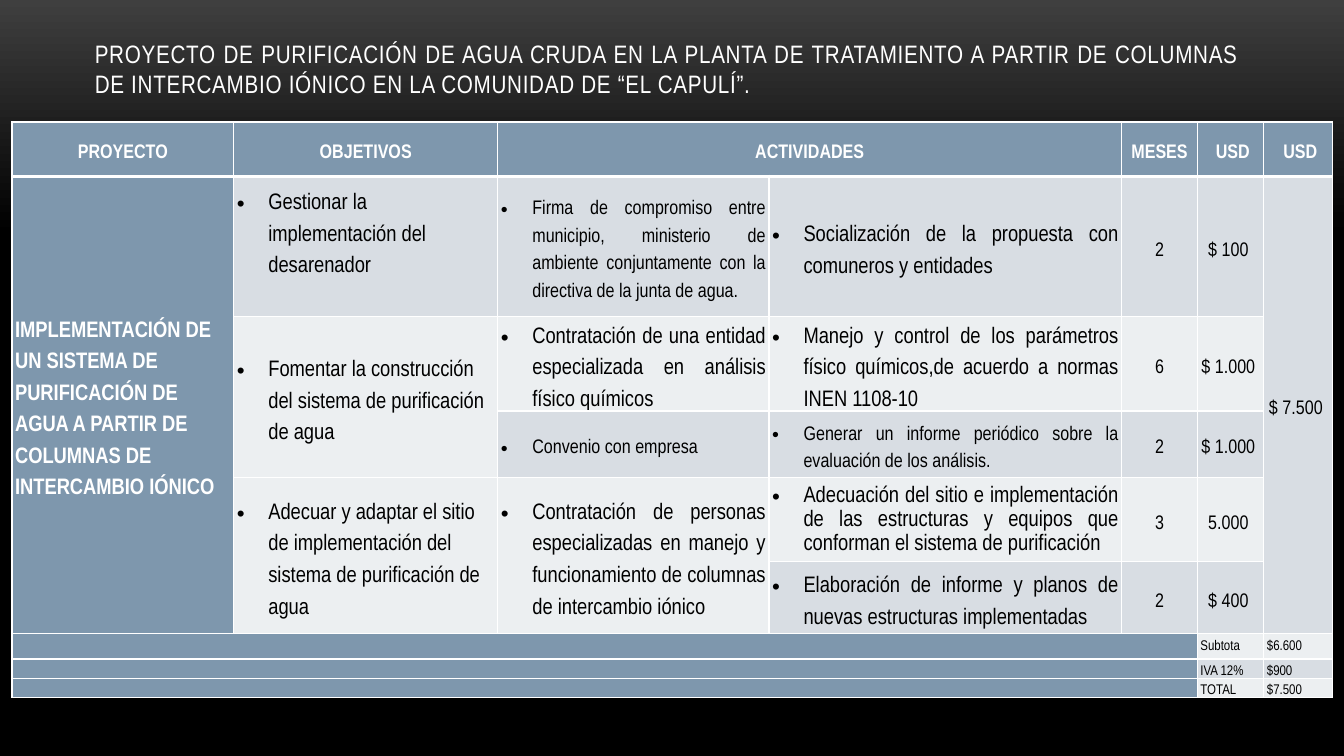
"""Build the water purification project slide with its budget table."""
import pptx
import pptx.util
import pptx.dml.color
import pptx.enum.text
import pptx.oxml.ns
import lxml.etree

Pt = pptx.util.Pt
ALIGN = pptx.enum.text.PP_ALIGN
ANCHOR = pptx.enum.text.MSO_ANCHOR
qn = pptx.oxml.ns.qn
FONT = "Arial Narrow"
COLORS = {"white": "FFFFFF", "black": "000000", "gray": "3F3F3F",
          "blue": "7E97AD", "dark_band": "D8DDE3", "light_band": "ECEFF1"}


def rgb(name):
    return pptx.dml.color.RGBColor.from_string(COLORS[name])


def apply(target, values):
    for name, value in values.items():
        setattr(target, name, value)


deck = pptx.Presentation()
apply(deck, {"slide_width": Pt(960), "slide_height": Pt(540)})
page = deck.slides.add_slide(deck.slide_layouts[5])

backdrop = page.background.fill
backdrop.gradient()
backdrop.gradient_angle = 270
for stop, position, color in zip(backdrop.gradient_stops, (0, 0.31), ("gray", "black")):
    stop.position = position
    stop.color.rgb = rgb(color)

title = page.shapes.title
apply(title, {"left": Pt(60.5), "top": Pt(10.8), "width": Pt(832.3), "height": Pt(63.4)})
apply(title.text_frame, {"vertical_anchor": ANCHOR.BOTTOM, "word_wrap": True,
                         "auto_size": pptx.enum.text.MSO_AUTO_SIZE.NONE})
para = title.text_frame.paragraphs[0]
para.alignment = ALIGN.JUSTIFY
span = para.add_run()
span.text = ("PROYECTO DE PURIFICACIÓN DE AGUA CRUDA EN LA PLANTA DE TRATAMIENTO A PARTIR "
             "DE COLUMNAS DE INTERCAMBIO IÓNICO EN LA COMUNIDAD DE “EL CAPULÍ”.")
apply(span.font, {"name": FONT, "size": Pt(18), "bold": False})
span.font.color.rgb = rgb("white")
span.font._element.set("spc", "50")

ROWS = [
    ["PROYECTO", "OBJETIVOS", "ACTIVIDADES", "", "MESES", " USD", " USD"],
    ["IMPLEMENTACIÓN DE UN SISTEMA DE PURIFICACIÓN DE AGUA A PARTIR DE COLUMNAS DE "
     "INTERCAMBIO IÓNICO",
     "Gestionar la implementación del desarenador",
     "Firma de compromiso entre municipio, ministerio de ambiente conjuntamente con la "
     "directiva de la junta de agua.",
     "Socialización de la propuesta con comuneros y entidades", "2", "$ 100 ", "$ 7.500 "],
    ["", "Fomentar la construcción del sistema de purificación de agua",
     "Contratación de una entidad especializada en análisis físico químicos",
     "Manejo y control de los parámetros físico químicos,de acuerdo a normas INEN 1108-10",
     "6", "$ 1.000 ", ""],
    ["", "", "Convenio con empresa",
     "Generar un informe periódico sobre la evaluación de los análisis.", "2", "$ 1.000 ", ""],
    ["", "Adecuar y adaptar el sitio de implementación del sistema de purificación de agua",
     "Contratación de personas especializadas en manejo y funcionamiento de columnas de "
     "intercambio iónico",
     "Adecuación del sitio e implementación de las estructuras y equipos que conforman el "
     "sistema de purificación ", "3", "5.000 ", ""],
    ["", "", "", "Elaboración de informe y planos de nuevas estructuras implementadas",
     "2", "$ 400 ", ""],
    ["", "", "", "", "", "Subtota", "$6.600"],
    ["", "", "", "", "", "IVA 12%", "$900"],
    ["", "", "", "", "", "TOTAL", "$7.500"],
]
WIDTHS = [158.4, 188.6, 193.7, 252, 54, 47.5, 49]
HEIGHTS = [38.9, 100, 60.5, 47.5, 59.8, 51.8, 18, 11.5, 11.5]
MERGES = [(0, 2, 0, 3), (1, 0, 5, 0), (1, 6, 5, 6), (2, 1, 3, 1), (4, 1, 5, 1),
          (4, 2, 5, 2), (6, 0, 6, 4), (7, 0, 7, 4), (8, 0, 8, 4)]
BANDS = ["blue", "dark_band", "light_band", "dark_band", "light_band", "dark_band",
         "light_band", "dark_band", "light_band"]
SMALL_ACTIVITIES = {(1, 2), (3, 2), (3, 3)}
FIRST_TOTAL = 6

table = page.shapes.add_table(len(ROWS), len(WIDTHS), Pt(8.6), Pt(87.1),
                              Pt(sum(WIDTHS)), Pt(sum(HEIGHTS))).table
apply(table, {"first_row": False, "horz_banding": False})
for column, width in zip(table.columns, WIDTHS):
    column.width = Pt(width)
for line, height in zip(table.rows, HEIGHTS):
    line.height = Pt(height)

for r, texts in enumerate(ROWS):
    for c, text in enumerate(texts):
        cell = table.cell(r, c)
        heading = r == 0 or c == 0
        total = r >= FIRST_TOTAL
        bulleted = 1 <= c <= 3 and not heading and not total
        apply(cell, {"margin_left": Pt(2.2), "margin_right": Pt(2.2), "margin_top": 0,
                     "margin_bottom": 0,
                     "vertical_anchor": ANCHOR.TOP if total else ANCHOR.MIDDLE})
        for side in ("L", "R", "T", "B"):
            thick = (r, side) in {(0, "B"), (1, "T")}
            border = lxml.etree.SubElement(cell._tc.get_or_add_tcPr(), qn(f"a:ln{side}"),
                                           w=str(Pt(3 if thick else 1)))
            paint = lxml.etree.SubElement(border, qn("a:solidFill"))
            lxml.etree.SubElement(paint, qn("a:srgbClr"), val=COLORS["white"])
        cell.fill.solid()
        cell.fill.fore_color.rgb = rgb("blue" if heading or (total and c < 5) else BANDS[r])

        para = cell.text_frame.paragraphs[0]
        if not text:
            lxml.etree.SubElement(para._p, qn("a:endParaRPr"), sz="800")
            continue
        if bulleted:
            props = para._p.get_or_add_pPr()
            props.set("marL", str(Pt(22.5)))
            props.set("indent", str(Pt(-22.5)))
            lxml.etree.SubElement(props, qn("a:buFont"), typeface="Arial")
            lxml.etree.SubElement(props, qn("a:buChar"), char="•")
        if r == 0 or (c >= 4 and not total):
            alignment = ALIGN.CENTER
        else:
            alignment = ALIGN.LEFT if c < 2 else ALIGN.JUSTIFY
        apply(para, {"alignment": alignment, "line_spacing": 1.15 if (r, c) == (4, 3) else 1.5})
        if total:
            size = 10
        else:
            size = 14 if r == 0 or c >= 4 or (r, c) in SMALL_ACTIVITIES else 16
        span = para.add_run()
        span.text = text
        apply(span.font, {"name": FONT, "size": Pt(size), "bold": heading})
        span.font.color.rgb = rgb("white" if heading else "black")

table.cell(1, 1).margin_bottom = Pt(23)
for top, left, bottom, right in MERGES:
    table.cell(top, left).merge(table.cell(bottom, right))

deck.save("out.pptx")
